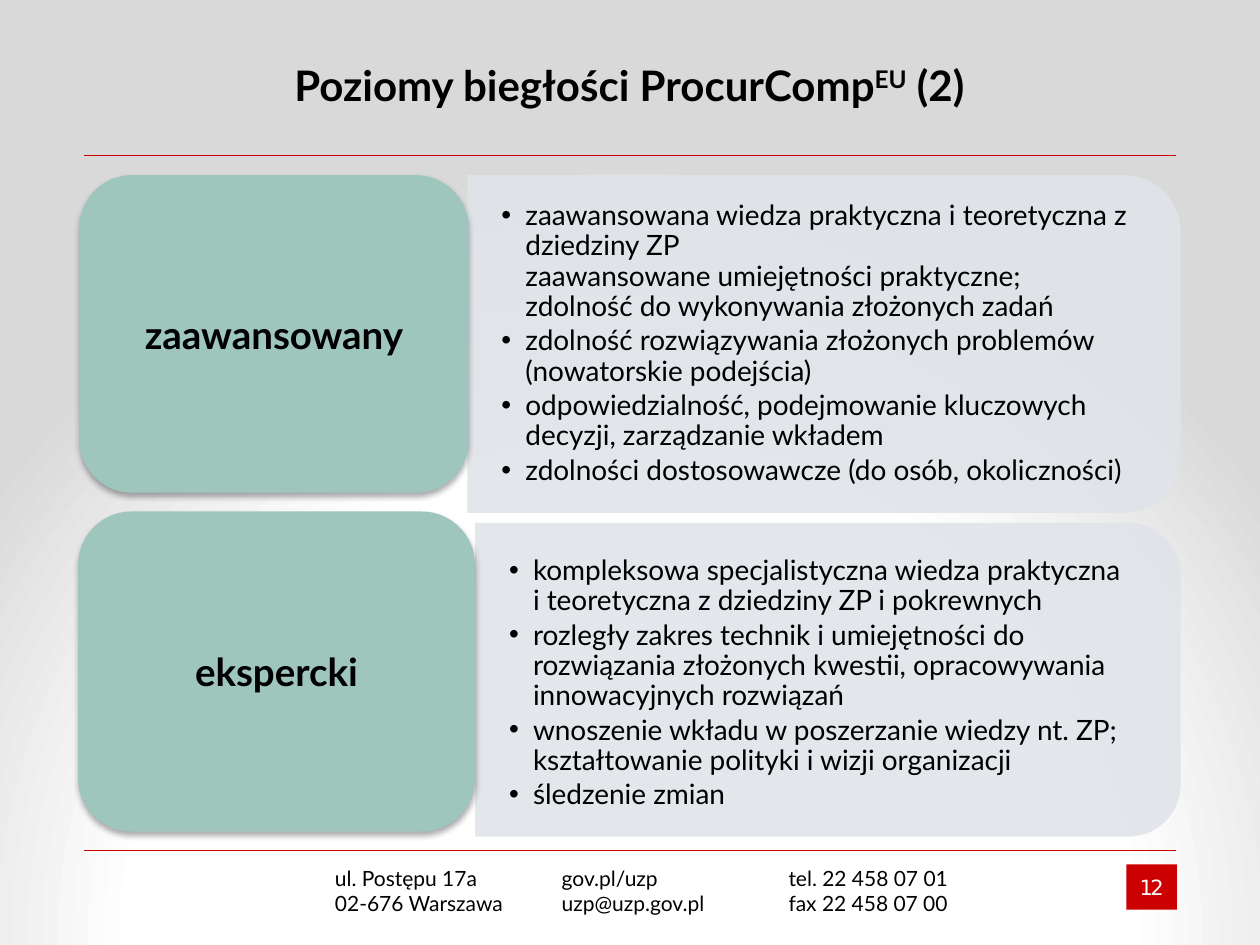
from dataclasses import dataclass

from pptx import Presentation, util as u
from pptx.dml.color import RGBColor
from pptx.enum import shapes, text
from pptx.oxml import parse_xml
from pptx.oxml.ns import nsdecls, qn
from lxml import etree

Inches, Pt = u.Inches, u.Pt


@dataclass(frozen=True)
class Theme:
    font: str = "Lato"
    number_font: str = "DejaVu Sans"
    ink: str = "000000"
    white: str = "FFFFFF"
    grey: str = "D9D9D9"
    red: str = "CC0000"
    panel: str = "E0E4E9"
    level: str = "9EC6BD"
    title_size: int = 24
    level_size: int = 22
    list_size: int = 16
    small_size: int = 12


THEME = Theme()

# Each level: name, its tile, the panel beside it, a nudge of the list, the points
LEVELS = [
    ("zaawansowany", (0.63, 1.39, 3.09, 2.52), (3.71, 1.39, 5.66, 2.68), 0, [
        "zaawansowana wiedza praktyczna i teoretyczna z dziedziny ZP\n"
        "zaawansowane umiejętności praktyczne; zdolność do wykonywania złożonych zadań",
        "zdolność rozwiązywania złożonych problemów (nowatorskie podejścia)",
        "odpowiedzialność, podejmowanie kluczowych decyzji, zarządzanie wkładem",
        "zdolności dostosowawcze (do osób, okoliczności)",
    ]),
    ("ekspercki", (0.62, 4.06, 3.15, 2.54), (3.77, 4.15, 5.6, 2.49), 0.03, [
        "kompleksowa specjalistyczna wiedza praktyczna i teoretyczna z dziedziny ZP i pokrewnych",
        "rozległy zakres technik i umiejętności do rozwiązania złożonych kwestii, "
        "opracowywania innowacyjnych rozwiązań",
        "wnoszenie wkładu w poszerzanie wiedzy nt. ZP; kształtowanie polityki i wizji organizacji",
        "śledzenie zmian",
    ]),
]

CONTACTS = [
    ("ul. Postępu 17a", "02-676 Warszawa"),
    ("gov.pl/uzp", "uzp@uzp.gov.pl"),
    ("tel. 22 458 07 01", "fax 22 458 07 00"),
]


def rgb(value):
    return RGBColor.from_string(value)


def add_span(para, words, size, color=THEME.ink, bold=False, font=THEME.font):
    span = para.add_run()
    span.text = words
    span.font.size = Pt(size)
    span.font.name = font
    span.font.bold = bold
    span.font.color.rgb = rgb(color)
    return span


def next_para(frame, index):
    return frame.paragraphs[0] if index == 0 else frame.add_paragraph()


def place(shape, left, top, width, height):
    shape.left, shape.top = Inches(left), Inches(top)
    shape.width, shape.height = Inches(width), Inches(height)


def set_background(page):
    """Radial glow from below the page, grey towards the top."""
    stops = [(0, THEME.white), (63, THEME.white), (100, THEME.grey)]
    stop_xml = "".join(
        f'<a:gs pos="{at * 1000}"><a:srgbClr val="{color}"/></a:gs>' for at, color in stops)
    page.element.cSld.insert(0, parse_xml(
        f'<p:bg {nsdecls("p", "a")}><p:bgPr><a:gradFill><a:gsLst>{stop_xml}</a:gsLst>'
        '<a:path path="circle"><a:fillToRect l="50000" t="130000" r="50000" b="-30000"/>'
        '</a:path></a:gradFill><a:effectLst/></p:bgPr></p:bg>'))


def add_rule(page, top):
    rule = page.shapes.add_connector(
        shapes.MSO_CONNECTOR.STRAIGHT, Inches(0.67), Inches(top), Inches(9.33), Inches(top))
    rule.line.color.rgb = rgb(THEME.red)
    rule.line.width = Pt(0.25)
    etree.SubElement(rule.element.spPr, qn("a:effectLst"))


def add_block(page, kind, bounds, color):
    block = page.shapes.add_shape(kind, *map(Inches, bounds))
    block.shadow.inherit = False
    block.fill.solid()
    block.fill.fore_color.rgb = rgb(color)
    block.line.fill.background()
    return block


def add_label(block, words, size, **style):
    frame = block.text_frame
    frame.vertical_anchor = text.MSO_ANCHOR.MIDDLE
    para = frame.paragraphs[0]
    para.alignment = text.PP_ALIGN.CENTER
    return add_span(para, words, size, **style)


def add_panel(page, left, top, width, height):
    """Panel rounded on its right side: a top-rounded shape turned by 90 degrees."""
    turned = (left + (width - height) / 2, top + (height - width) / 2, height, width)
    panel = add_block(page, shapes.MSO_SHAPE.ROUND_2_SAME_RECTANGLE, turned, THEME.panel)
    panel.rotation = 90
    color = panel.element.spPr.find(qn("a:solidFill"))[0]
    etree.SubElement(color, qn("a:alpha"), val="90000")


def add_level_tile(page, name, bounds):
    tile = add_block(page, shapes.MSO_SHAPE.ROUNDED_RECTANGLE, bounds, THEME.level)
    effects = tile.element.spPr.find(qn("a:effectLst"))
    effects.append(parse_xml(
        f'<a:outerShdw {nsdecls("a")} blurRad="{Pt(3.5)}" dist="{Pt(2.2)}" dir="5400000" '
        'rotWithShape="0"><a:srgbClr val="000000"><a:alpha val="32000"/></a:srgbClr>'
        '</a:outerShdw>'))
    add_label(tile, name, THEME.level_size, bold=True)


def fill_list(page, box, bounds, nudge, points):
    left, top, width, height = bounds
    place(box, left, top + nudge, width, height)
    page.shapes.element.append(box.element)  # in front of its panel
    frame = box.text_frame
    frame.word_wrap = True
    frame.auto_size = text.MSO_AUTO_SIZE.NONE
    frame.vertical_anchor = text.MSO_ANCHOR.MIDDLE
    frame.margin_left, frame.margin_right = Inches(0.27), Inches(0.4)
    frame.margin_top = frame.margin_bottom = Inches(0.14)
    for index, point in enumerate(points):
        para = next_para(frame, index)
        para.line_spacing = 0.9
        para.space_before, para.space_after = Pt(0), Pt(2.5)
        props = para._p.get_or_add_pPr()
        props.set("marL", str(Inches(0.19)))
        props.set("indent", str(Inches(-0.19)))
        etree.SubElement(props, qn("a:buChar"), char="•")
        for number, line in enumerate(point.split("\n")):
            if number:
                para.add_line_break()
            add_span(para, line, THEME.list_size)


def fill_title(title):
    place(title, 0.62, 0.13, 8.75, 1.08)
    add_label(title, "Poziomy biegłości ProcurComp", THEME.title_size, bold=True)
    raised = add_label(title, "EU", THEME.title_size, bold=True)
    raised._r.get_or_add_rPr().set("baseline", "30000")
    add_label(title, " (2)", THEME.title_size, bold=True)


def add_contact(page, left, lines):
    box = page.shapes.add_textbox(Inches(left), Inches(6.82), Inches(1.65), Inches(0.5))
    box.text_frame.word_wrap = True
    for index, line in enumerate(lines):
        add_span(next_para(box.text_frame, index), line, THEME.small_size)


def add_page_number(page, number):
    block = add_block(page, shapes.MSO_SHAPE.RECTANGLE, (8.94, 6.86, 0.4, 0.36), THEME.red)
    block.text_frame.margin_left = block.text_frame.margin_right = 0
    span = add_label(block, number, THEME.small_size, color=THEME.white, font=THEME.number_font)
    span._r.get_or_add_rPr().set("spc", "-150")


def main():
    deck = Presentation()
    deck.slide_width, deck.slide_height = Inches(10), Inches(7.5)
    page = deck.slides.add_slide(deck.slide_layouts.get_by_name("Two Content"))
    title, *lists = page.placeholders
    set_background(page)
    for top in (1.23, 6.75):
        add_rule(page, top)
    add_page_number(page, "12")
    for column, lines in enumerate(CONTACTS):
        add_contact(page, 2.56 + 1.8 * column, lines)
    fill_title(title)
    for box, (name, tile, panel, nudge, points) in zip(lists, LEVELS):
        add_panel(page, *panel)
        fill_list(page, box, panel, nudge, points)
        add_level_tile(page, name, tile)
    deck.save("out.pptx")


if __name__ == "__main__":
    main()
